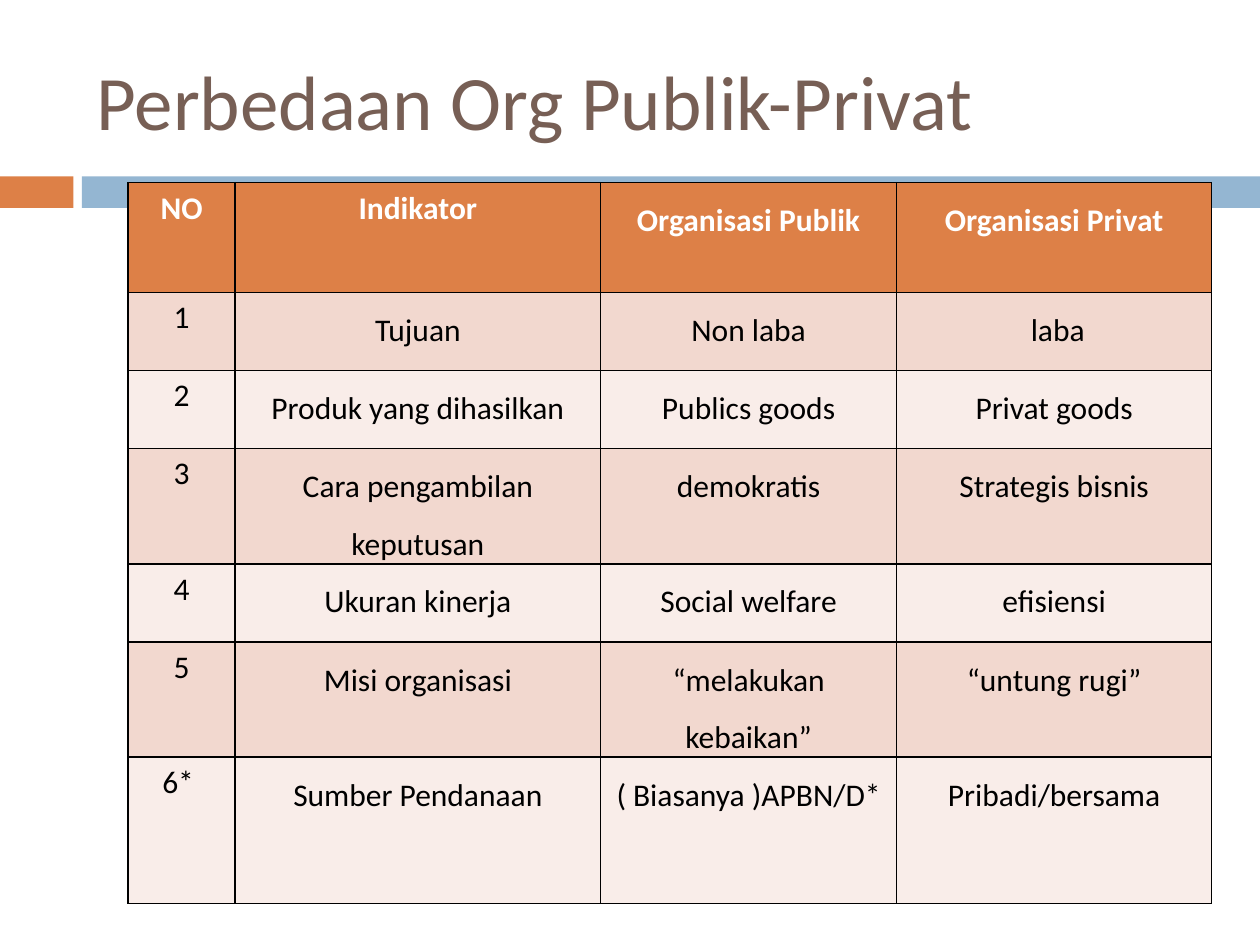
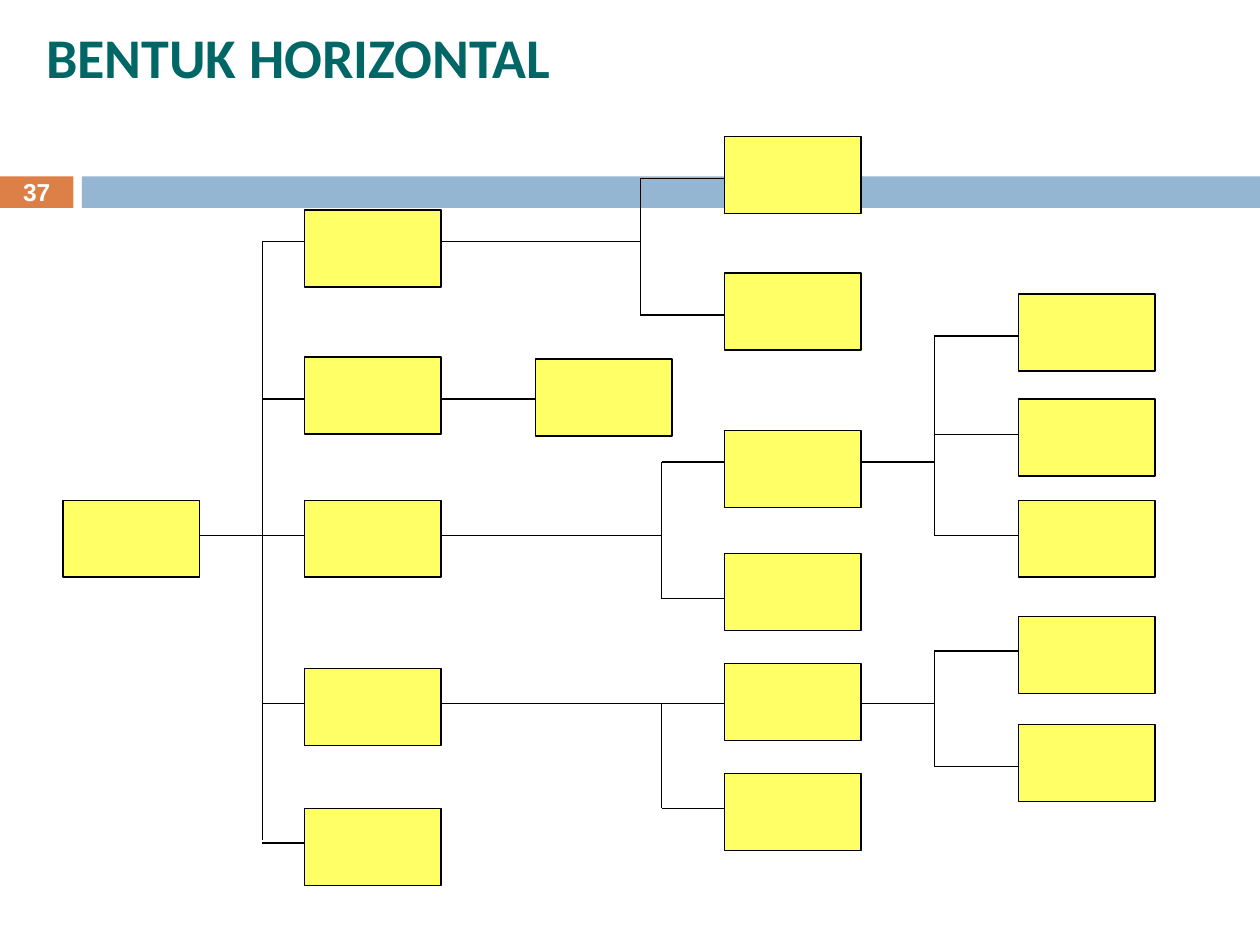
from lxml import etree
from pptx import Presentation
from pptx import util as u
from pptx.dml import color
from pptx.enum import shapes, text
from pptx.oxml import ns

COLORS = {
    "orange": "DD8047", "blue": "94B6D2", "brown": "775F55", "teal": "006666",
    "yellow": "FFFF66", "white": "FFFFFF", "black": "000000",
    "odd": "F2D8CF", "even": "F9EDE9",
}
COLUMNS, ROWS = 120, 90
SLIDE_WIDTH, SLIDE_HEIGHT = u.Inches(10), u.Inches(7.5)
CENTER, LEFT = text.PP_ALIGN.CENTER, text.PP_ALIGN.LEFT

HEADING = {"size": u.Pt(44), "name": "Calibri", "bold": False}
STRONG_HEADING = {"size": u.Pt(32), "name": "Calibri", "bold": True}
HEADER = {"size": u.Pt(18), "name": "Calibri", "bold": True}
CELL = {**HEADER, "bold": False}
PAGE_NUMBER = {"size": u.Pt(14), "name": "Arial", "bold": True}
PLAIN = {"alignment": CENTER}
SPACED = {"alignment": CENTER, "line_spacing": 1.5, "space_after": u.Pt(5)}
TIGHT = {"margin_left": u.Inches(0.07), "margin_right": u.Inches(0.07),
         "margin_top": 0, "margin_bottom": 0}

TABLE_ROWS = [
    ["NO", "Indikator", "Organisasi Publik", "Organisasi Privat"],
    ["1", "Tujuan", "Non laba", " laba"],
    ["2", "Produk yang dihasilkan", "Publics goods", "Privat goods"],
    ["3", "Cara pengambilan keputusan", "demokratis", "Strategis bisnis"],
    ["4", "Ukuran kinerja", "Social welfare", "efisiensi"],
    ["5", "Misi organisasi", "“melakukan kebaikan”", "“untung rugi”"],
    ["6* ", "Sumber Pendanaan", "( Biasanya )APBN/D*", "Pribadi/bersama"],
]
TABLE_WIDTHS = [10.2, 34.8, 28.2, 30]
TABLE_HEIGHTS = [10.44, 7.44, 7.44, 10.8, 7.44, 10.8, 13.92]

UNIT_WIDTH, UNIT_HEIGHT = 13, 7.33
UNITS = {
    6: [47.64],
    29: [20, 34, 47.64, 63.7, 77],
    51: [34.2],
    69: [13, 26, 41, 52.7, 63.2, 73.7],
    97: [28, 38, 47.64, 58.7, 69],
}
SPINES = {
    25: [(23, 80)],
    61: [(17, 30)],
    63: [(44, 57), (67, 77)],
    89: [(32, 51), (62, 73)],
}
BRANCHES = [
    (12, 63, 51), (25, 61, 23), (25, 53, 38), (25, 89, 67), (25, 33, 80.3),
    (61, 72, 17), (61, 74, 30),
    (63, 89, 44), (63, 73, 57), (63, 69, 77),
    (89, 98, 32), (89, 98, 41.4), (89, 102, 51), (89, 100, 62), (89, 102, 73),
]


def apply(target, values):
    for name, value in values.items():
        setattr(target, name, value)


def rgb(name):
    return color.RGBColor.from_string(COLORS[name])


def across(columns):
    return round(SLIDE_WIDTH * columns / COLUMNS)


def down(rows):
    return round(SLIDE_HEIGHT * rows / ROWS)


def area(column, row, width, height):
    return across(column), down(row), across(width), down(height)


class Deck:
    def __init__(self):
        self.deck = Presentation()
        apply(self.deck, {"slide_width": SLIDE_WIDTH, "slide_height": SLIDE_HEIGHT})
        self.page = None

    def add_page(self):
        self.page = self.deck.slides.add_slide(self.deck.slide_layouts[5])
        self.box((0, 16.8, 7, 3), "orange")
        self.box((7.8, 16.8, 112.2, 3), "blue")

    def add_words(self, frame, words, font, ink, layout):
        para = frame.paragraphs[0]
        apply(para, layout)
        span = para.add_run()
        span.text = words
        apply(span.font, font)
        span.font.color.rgb = rgb(ink)

    def title(self, words, place, font, ink, anchor, spacing=1.0):
        box = self.page.shapes.title
        apply(box, dict(zip(("left", "top", "width", "height"), area(*place))))
        apply(box.text_frame, {"vertical_anchor": anchor, "word_wrap": True,
                               "auto_size": text.MSO_AUTO_SIZE.NONE})
        self.add_words(box.text_frame, words, font, ink,
                       {"alignment": LEFT, "line_spacing": spacing})

    def box(self, place, fill, outline=None):
        box = self.page.shapes.add_shape(shapes.MSO_SHAPE.RECTANGLE, *area(*place))
        box.shadow.inherit = False
        box.fill.solid()
        box.fill.fore_color.rgb = rgb(fill)
        if outline:
            box.line.color.rgb = rgb(outline)
            box.line.width = u.Pt(0.75)
        else:
            box.line.fill.background()

    def line(self, start, end):
        line = self.page.shapes.add_connector(
            shapes.MSO_CONNECTOR.STRAIGHT,
            across(start[0]), down(start[1]), across(end[0]), down(end[1]))
        line.line.color.rgb = rgb("black")
        line.line.width = u.Pt(0.75)
        etree.SubElement(line._element.spPr, ns.qn("a:effectLst"))

    def number(self, words):
        box = self.page.shapes.add_textbox(*area(0, 16.7, 7, 3.2))
        apply(box.text_frame, {"word_wrap": True,
                               "vertical_anchor": text.MSO_ANCHOR.MIDDLE})
        self.add_words(box.text_frame, words, PAGE_NUMBER, "white", PLAIN)

    def border(self, cell):
        properties = cell._tc.get_or_add_tcPr()
        for index, side in enumerate(("lnL", "lnR", "lnT", "lnB")):
            edge = etree.Element(ns.qn(f"a:{side}"), w=str(u.Pt(1)))
            fill = etree.SubElement(edge, ns.qn("a:solidFill"))
            etree.SubElement(fill, ns.qn("a:srgbClr"), val=COLORS["black"])
            properties.insert(index, edge)

    def cell(self, cell, words, row, column):
        header = row == 0
        spaced = column > 1 or (column == 1 and not header)
        if spaced:
            apply(cell, TIGHT)
        self.add_words(cell.text_frame, words, HEADER if header else CELL,
                       "white" if header else "black", SPACED if spaced else PLAIN)
        cell.fill.solid()
        band = "odd" if row % 2 else "even"
        cell.fill.fore_color.rgb = rgb("orange" if header else band)
        self.border(cell)

    def table(self, column, row, widths, heights, content):
        place = area(column, row, sum(widths), sum(heights))
        table = self.page.shapes.add_table(len(heights), len(widths), *place).table
        for index, width in enumerate(widths):
            table.columns[index].width = across(width)
        for index, height in enumerate(heights):
            table.rows[index].height = down(height)
        for row_index, entries in enumerate(content):
            for column_index, words in enumerate(entries):
                self.cell(table.cell(row_index, column_index), words,
                          row_index, column_index)


def comparison(deck):
    deck.add_page()
    deck.title("Perbedaan Org Publik-Privat", (8, 3, 107, 13), HEADING, "brown",
               text.MSO_ANCHOR.MIDDLE)
    deck.table(12.2, 17.4, TABLE_WIDTHS, TABLE_HEIGHTS, TABLE_ROWS)


def horizontal_chart(deck):
    deck.add_page()
    deck.number("37")
    deck.title("BENTUK HORIZONTAL", (3.2, 3, 72.6, 6), STRONG_HEADING, "teal",
               text.MSO_ANCHOR.TOP, 0.75)
    for start, end, row in BRANCHES:
        deck.line((start, row), (end, row))
    for column, spans in SPINES.items():
        for top, bottom in spans:
            deck.line((column, top), (column, bottom))
    for column, tops in UNITS.items():
        for top in tops:
            deck.box((column, top, UNIT_WIDTH, UNIT_HEIGHT), "yellow", "black")


def main():
    deck = Deck()
    comparison(deck)
    horizontal_chart(deck)
    deck.deck.save("out.pptx")


if __name__ == "__main__":
    main()
